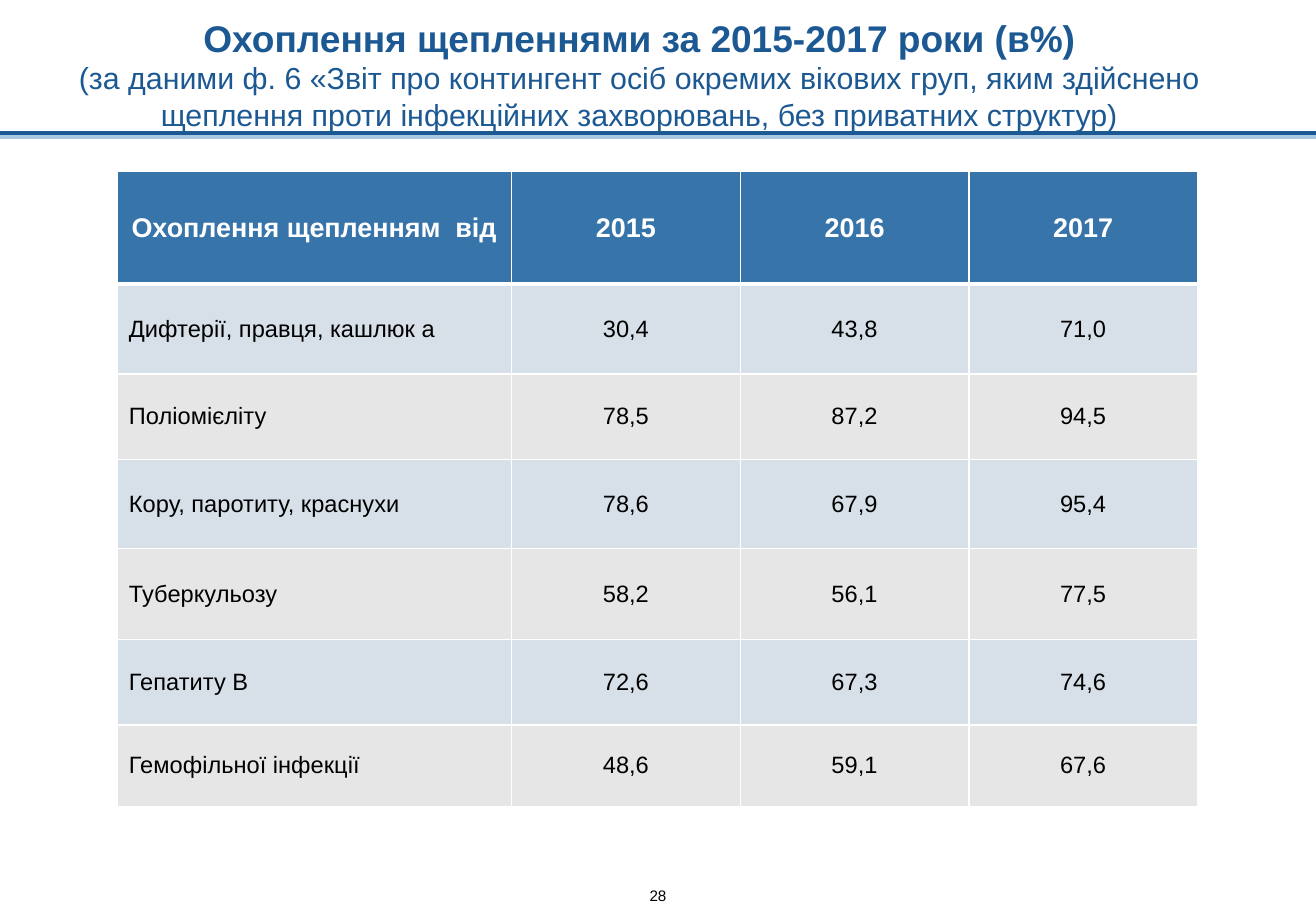
from lxml.etree import SubElement
from pptx import Presentation
from pptx.dml.color import RGBColor
from pptx.enum.shapes import MSO_CONNECTOR as Connector
from pptx.enum.text import MSO_ANCHOR as Anchor, PP_ALIGN as Align
from pptx.oxml import parse_xml
from pptx.oxml.ns import nsdecls, qn
from pptx.util import Pt

COLORS = {
    "title": "1C5993",
    "rule_shadow": "A8C7E2",
    "header": "3674AA",
    "odd_row": "D7E0E8",
    "even_row": "E6E6E6",
    "white": "FFFFFF",
    "black": "000000",
}


def add_span(para, text, size, color, bold=False):
    span = para.add_run()
    span.text = text
    span.font.name = "Arial"
    span.font.size = Pt(size)
    span.font.bold = bold
    span.font.color.rgb = RGBColor.from_string(COLORS[color])


def add_box(page, left, top, width, height, anchor, padding, wrap):
    frame = page.shapes.add_textbox(Pt(left), Pt(top), Pt(width), Pt(height)).text_frame
    frame.word_wrap = wrap
    frame.vertical_anchor = anchor
    frame.margin_left = frame.margin_right = 0
    frame.margin_top = frame.margin_bottom = Pt(padding)
    para = frame.paragraphs[0]
    para.alignment = Align.CENTER
    return para


deck = Presentation()
deck.slide_width, deck.slide_height = Pt(780), Pt(540)
page = deck.slides.add_slide(deck.slide_layouts[6])

# Page number
para = add_box(page, 382.5, 525.5, 15, 11, Anchor.TOP, 0, False)
add_span(para, "28", 9, "black")

# Rule under the title, with a hard light shadow
rule = page.shapes.add_connector(Connector.STRAIGHT, Pt(780), Pt(79), 0, Pt(79))
rule.line.width = Pt(2.25)
rule.line.color.rgb = RGBColor.from_string(COLORS["title"])
rule._element.spPr.append(parse_xml(
    f'<a:effectLst {nsdecls("a")}>'
    f'<a:outerShdw dist="{Pt(2)}" dir="5400000" algn="ctr" rotWithShape="0">'
    f'<a:srgbClr val="{COLORS["rule_shadow"]}"/></a:outerShdw></a:effectLst>'
))

# Title
para = add_box(page, 23.5, 10, 711, 72, Anchor.BOTTOM, 3.6, True)
add_span(para, "Охоплення щепленнями за 2015-2017 роки (в%)", 22, "title", True)
para.add_line_break()
add_span(
    para,
    "(за даними ф. 6 «Звіт про контингент осіб окремих вікових груп, яким здійснено "
    "щеплення проти інфекційних захворювань, без приватних структур)",
    18, "title",
)

# Coverage table
rows = [
    ("Охоплення щепленням  від", "2015", "2016", "2017"),
    ("Дифтерії, правця, кашлюк а", "30,4", "43,8", "71,0"),
    ("Поліомієліту", "78,5", "87,2", "94,5"),
    ("Кору, паротиту, краснухи", "78,6", "67,9", "95,4"),
    ("Туберкульозу", "58,2", "56,1", "77,5"),
    ("Гепатиту В", "72,6", "67,3", "74,6"),
    ("Гемофільної інфекції", "48,6", "59,1", "67,6"),
]
row_heights = [66.5, 53.5, 50.5, 53, 54, 50.5, 48.5]
column_widths = [234] + [135.5] * 3

table = page.shapes.add_table(
    len(rows), len(column_widths), Pt(69.25), Pt(101.75),
    Pt(sum(column_widths)), Pt(sum(row_heights)),
).table
for column, width in zip(table.columns, column_widths):
    column.width = Pt(width)

for r, (values, height) in enumerate(zip(rows, row_heights)):
    table.rows[r].height = Pt(height)
    is_header = r == 0
    fill = "header" if is_header else "odd_row" if r % 2 else "even_row"
    for c, value in enumerate(values):
        cell = table.cell(r, c)
        cell.vertical_anchor = Anchor.MIDDLE
        para = cell.text_frame.paragraphs[0]
        para.alignment = Align.CENTER if is_header or c else Align.LEFT
        add_span(para, value, 16 if is_header else 14,
                 "white" if is_header else "black", is_header)

        # White borders, thicker between the header and the body
        properties = cell._tc.get_or_add_tcPr()
        widths = {"L": 1, "R": 1, "T": 3 if r == 1 else 1, "B": 3 if is_header else 1}
        for side, width in widths.items():
            border = SubElement(properties, qn(f"a:ln{side}"), w=str(Pt(width)))
            paint = SubElement(border, qn("a:solidFill"))
            SubElement(paint, qn("a:srgbClr"), val=COLORS["white"])
        cell.fill.solid()
        cell.fill.fore_color.rgb = RGBColor.from_string(COLORS[fill])

deck.save("out.pptx")
